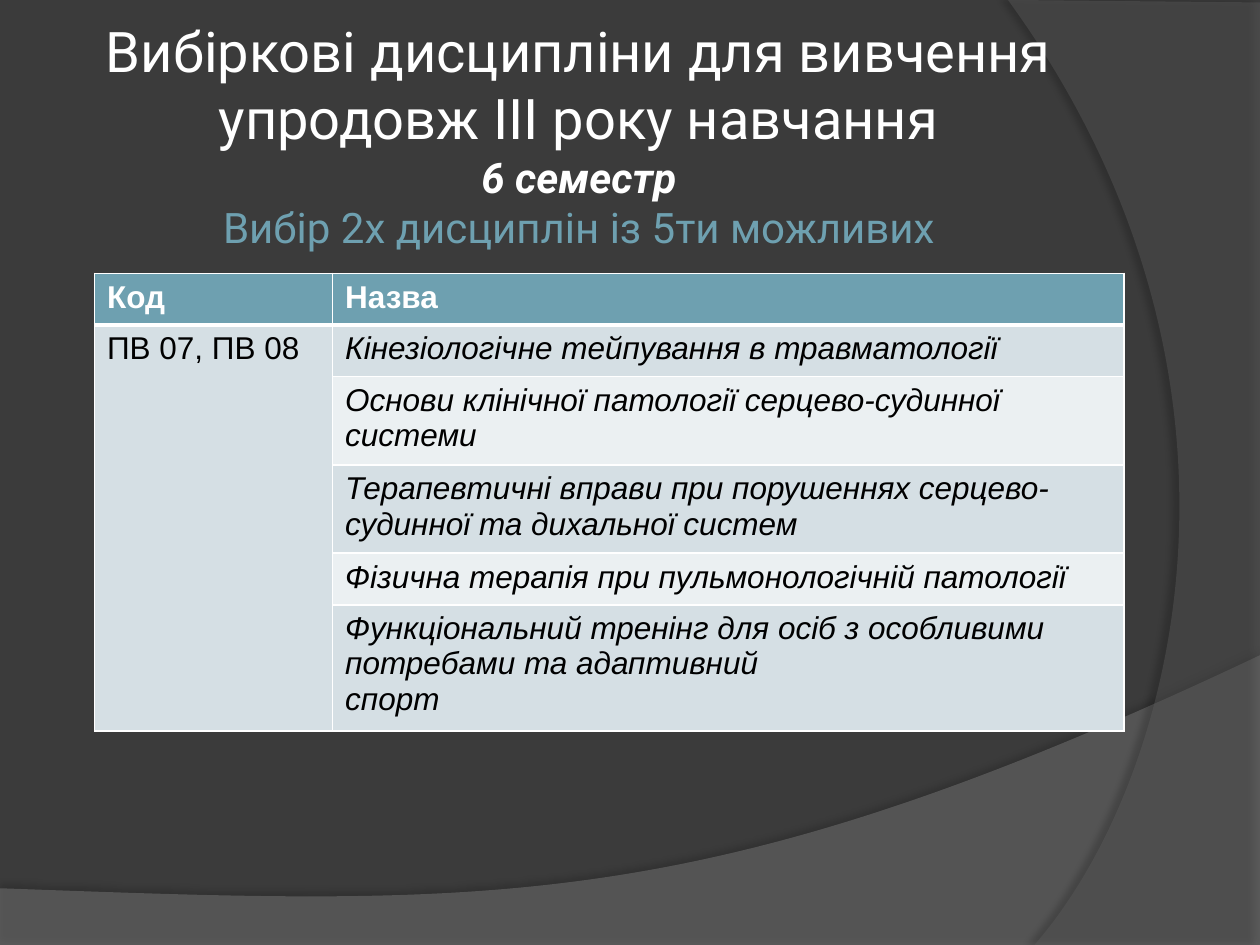
from dataclasses import dataclass

import pptx
import pptx.dml.color
import pptx.enum.text
import pptx.oxml
import pptx.oxml.ns
import pptx.util
from pptx.util import Inches

NS = pptx.oxml.ns.nsdecls("a")
WHITE = "FFFFFF"
TEAL = "6EA0B0"
BANDS = ("D5DFE4", "EBF0F2")
GRID = 100
Point = tuple[float, float]


@dataclass
class Swoosh:
    start: Point
    edges: list[Point]
    bend: list[Point]
    width: float
    fill: str
    alpha: int
    shade: int
    dist: float
    angle: int


@dataclass
class Line:
    text: str
    size: int
    tint: str = WHITE
    strong: bool = False


SWOOSHES = [
    Swoosh((0, 7.05), [(0, 7.51), (10, 7.51), (10, 5.2)],
           [(5.59, 7.29), (3.91, 7.19), (0, 7.05)], 10, "7F7F7F", 45, 35, 3.5, 270),
    Swoosh((10, 0.02), [(10, 7.5), (8.21, 7.5)],
           [(9.35, 6.19), (10.18, 3), (8, 0)], 2, "5E5E5E", 40, 45, 4, 180),
]
TITLE = [
    Line("Вибіркові дисципліни для вивчення упродовж ІІІ року навчання", 32),
    Line("6 семестр", 24, strong=True),
    Line("Вибір 2х дисциплін із 5ти можливих", 24, TEAL),
]
HEADS = ("Код", "Назва")
CODE = "ПВ 07, ПВ 08"
NAMES = [
    "Кінезіологічне тейпування в травматології",
    "Основи клінічної патології серцево-судинної системи",
    "Терапевтичні вправи при порушеннях серцево-судинної та дихальної систем",
    "Фізична терапія при пульмонологічній патології",
    "Функціональний тренінг для осіб з особливими потребами та адаптивний\nспорт",
]


def color(code: str) -> pptx.dml.color.RGBColor:
    return pptx.dml.color.RGBColor.from_string(code)


def paint(fill, code: str) -> None:
    fill.solid()
    fill.fore_color.rgb = color(code)


def style(font, face: str, size: int, tint: str, bold=False, slant=False) -> None:
    font.name = face
    font.size = pptx.util.Pt(size)
    font.color.rgb = color(tint)
    font.bold = bold
    font.italic = slant


def snap(point: Point) -> Point:
    return round(point[0] * GRID), round(point[1] * GRID)


def bend_edge(shape, first: int, width: float) -> None:
    route = shape._element.find(".//" + pptx.oxml.ns.qn("a:path"))
    route.set("w", str(round(width * GRID)))
    shape.width = Inches(width)
    lines = route.findall(pptx.oxml.ns.qn("a:lnTo"))[first:first + 3]
    cubic = pptx.oxml.parse_xml(f"<a:cubicBezTo {NS}/>")
    lines[0].addprevious(cubic)
    for line in lines:
        cubic.append(line[0])
        route.remove(line)


def draw_swoosh(slide, item: Swoosh) -> None:
    pen = slide.shapes.build_freeform(*snap(item.start), scale=Inches(1) / GRID)
    pen.add_line_segments([snap(dot) for dot in item.edges + item.bend], close=True)
    shape = pen.convert_to_shape()
    bend_edge(shape, len(item.edges), item.width)
    paint(shape.fill, item.fill)
    shape.line.fill.background()
    tone = shape.fill._xPr.find(".//" + pptx.oxml.ns.qn("a:srgbClr"))
    tone.append(pptx.oxml.parse_xml(f'<a:alpha {NS} val="{item.alpha * 1000}"/>'))
    shape._element.spPr.append(pptx.oxml.parse_xml(
        f'<a:effectLst {NS}><a:outerShdw blurRad="{pptx.util.Pt(4)}" '
        f'dist="{pptx.util.Pt(item.dist)}" dir="{item.angle * 60000}" rotWithShape="0">'
        f'<a:srgbClr val="000000"><a:alpha val="{item.shade * 1000}"/></a:srgbClr>'
        '</a:outerShdw></a:effectLst>'))


def draw_title(slide, lines: list[Line]) -> None:
    box = slide.shapes.add_textbox(Inches(0.51), Inches(0.44), Inches(8.17), Inches(1.25))
    frame = box.text_frame
    frame.word_wrap = True
    frame.vertical_anchor = pptx.enum.text.MSO_ANCHOR.MIDDLE
    frame.margin_left = frame.margin_right = Inches(0.05)
    frame.margin_top = frame.margin_bottom = Inches(0.05)
    frame.text = "\v".join(line.text for line in lines)
    para = frame.paragraphs[0]
    para.alignment = pptx.enum.text.PP_ALIGN.CENTER
    for run, line in zip(para.runs, lines):
        style(run.font, "Roboto", line.size, line.tint, line.strong, line.strong)


def edge(cell, side: str, width: int) -> None:
    cell._tc.get_or_add_tcPr().append(pptx.oxml.parse_xml(
        f'<a:ln{side} {NS} w="{pptx.util.Pt(width)}"><a:solidFill>'
        f'<a:srgbClr val="{WHITE}"/></a:solidFill></a:ln{side}>'))


def draw_cell(cell, text: str, row: int, col: int) -> None:
    head = row == 0
    for side in "LRTB":
        thick = (side == "B" and head) or (side == "T" and row == 1)
        edge(cell, side, 3 if thick else 1)
    paint(cell.fill, TEAL if head else BANDS[(row - 1) % 2 if col else 0])
    cell.text_frame.text = text
    for para in cell.text_frame.paragraphs:
        for run in para.runs:
            style(run.font, "Arial", 18, WHITE if head else "000000",
                  head, not head and col == 1)


def draw_table(slide) -> None:
    rows = [HEADS] + [("" if i else CODE, name) for i, name in enumerate(NAMES)]
    high = Inches(0.41)
    frame = slide.shapes.add_table(len(rows), 2, Inches(0.75), Inches(2.17),
                                   Inches(8.17), high * len(rows))
    table = frame.table
    for col, width in zip(table.columns, (1.89, 6.28)):
        col.width = Inches(width)
    for r, row in enumerate(rows):
        table.rows[r].height = high
        for c, text in enumerate(row):
            draw_cell(table.cell(r, c), text, r, c)
    table.cell(1, 0).merge(table.cell(len(NAMES), 0))
    frame.height = Inches(3.62)


def main() -> None:
    deck = pptx.Presentation()
    deck.slide_width, deck.slide_height = Inches(10), Inches(7.5)
    slide = deck.slides.add_slide(deck.slide_layouts[6])
    paint(slide.background.fill, "3B3B3B")
    for item in SWOOSHES:
        draw_swoosh(slide, item)
    draw_title(slide, TITLE)
    draw_table(slide)
    deck.save("out.pptx")


if __name__ == "__main__":
    main()
